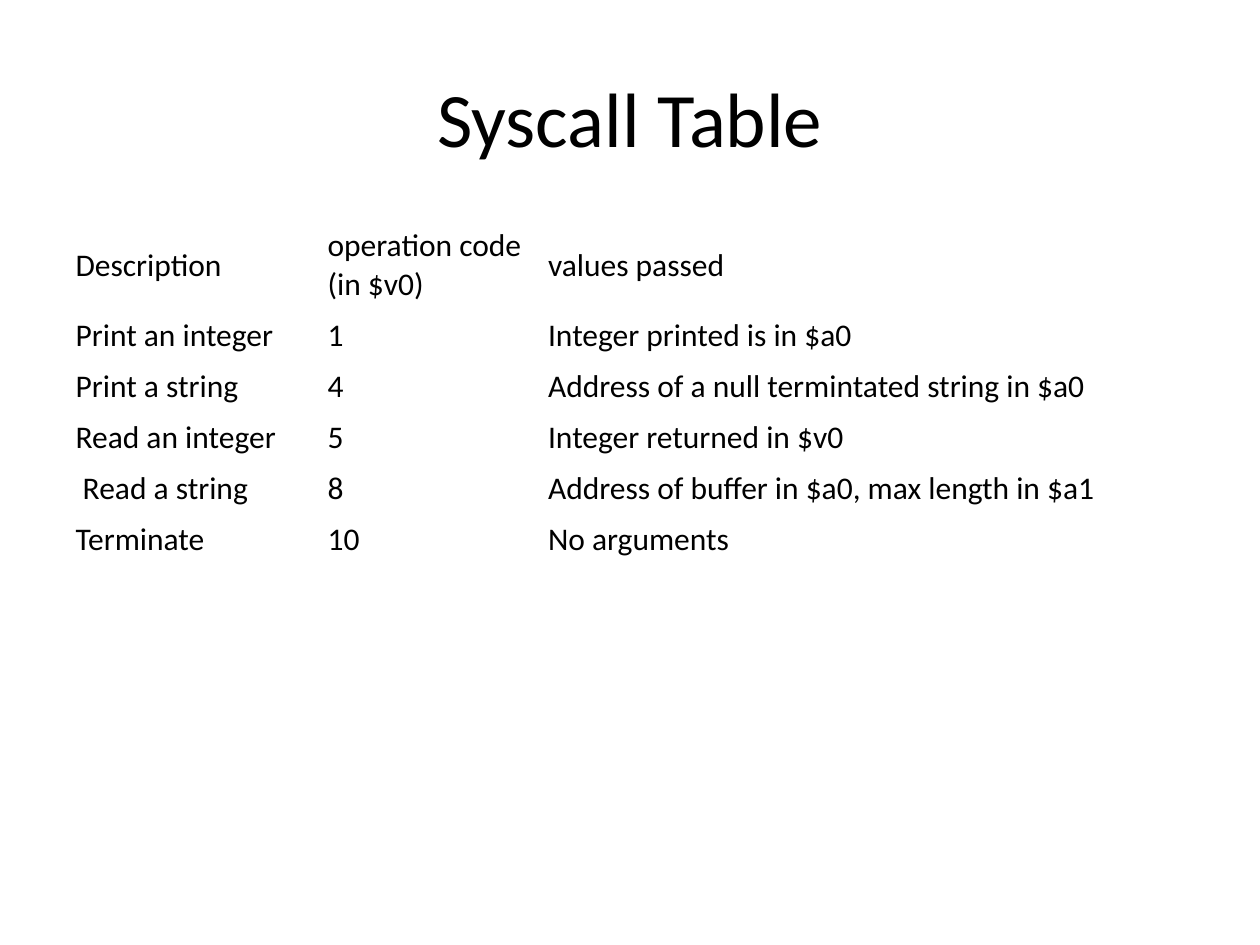
"""Build the slide that lists the common system calls."""
from pptx import Presentation
from pptx.dml.color import RGBColor
from pptx.enum.text import MSO_ANCHOR as Anchor, PP_ALIGN as Align
from pptx.util import Inches, Pt

COLORS = {"background": "FFFFFF", "text": "000000"}
FONT = "Calibri"
COLUMN_WIDTHS = (2, 1.75, 5.25)
HEADER_HEIGHT = 0.71
ROW_HEIGHT = 0.4
SYSCALLS = (
    ("Description", "operation code (in $v0)", "values passed"),
    ("Print an integer", "1", "Integer printed is in $a0"),
    ("Print a string", "4", "Address of a null termintated string in $a0"),
    ("Read an integer", "5", "Integer returned in $v0"),
    (" Read a string", "8", "Address of buffer in $a0, max length in $a1"),
    ("Terminate", "10", "No arguments"),
    ("", "", ""),
)


def add_run(paragraph, text, size):
    """Add one formatted run to a paragraph."""
    run = paragraph.add_run()
    run.text = text
    run.font.name = FONT
    run.font.size = Pt(size)
    run.font.bold = False
    run.font.color.rgb = RGBColor.from_string(COLORS["text"])


def set_title(slide, text):
    """Place and fill the title placeholder."""
    title = slide.shapes.title
    title.left, title.top = Inches(0.5), Inches(0.3)
    title.width, title.height = Inches(9), Inches(1.25)
    title.text_frame.vertical_anchor = Anchor.MIDDLE
    paragraph = title.text_frame.paragraphs[0]
    paragraph.alignment = Align.CENTER
    add_run(paragraph, text, 44)


def fill_cell(cell, text):
    """Clear a cell's fill and write its text."""
    cell.fill.background()
    cell.vertical_anchor = Anchor.MIDDLE
    paragraph = cell.text_frame.paragraphs[0]
    if text:
        add_run(paragraph, text, 18)
    else:
        paragraph.font.size = Pt(18)


def add_syscall_table(slide):
    """Add the plain table of system calls."""
    height = HEADER_HEIGHT + ROW_HEIGHT * (len(SYSCALLS) - 1)
    frame = slide.shapes.add_table(
        len(SYSCALLS), len(COLUMN_WIDTHS), Inches(0.5), Inches(1.75),
        Inches(sum(COLUMN_WIDTHS)), Inches(height))
    table = frame.table
    table.first_row = False
    table.horz_banding = False
    for column, width in zip(table.columns, COLUMN_WIDTHS):
        column.width = Inches(width)
    for index, (row, texts) in enumerate(zip(table.rows, SYSCALLS)):
        row.height = Inches(ROW_HEIGHT if index else HEADER_HEIGHT)
        for cell, text in zip(row.cells, texts):
            fill_cell(cell, text)


def main():
    """Create and save the presentation."""
    presentation = Presentation()
    presentation.slide_width = Inches(10)
    presentation.slide_height = Inches(7.5)
    slide = presentation.slides.add_slide(presentation.slide_layouts[5])
    background = slide.background.fill
    background.solid()
    background.fore_color.rgb = RGBColor.from_string(COLORS["background"])
    set_title(slide, "Syscall Table")
    add_syscall_table(slide)
    presentation.save("out.pptx")


if __name__ == "__main__":
    main()
